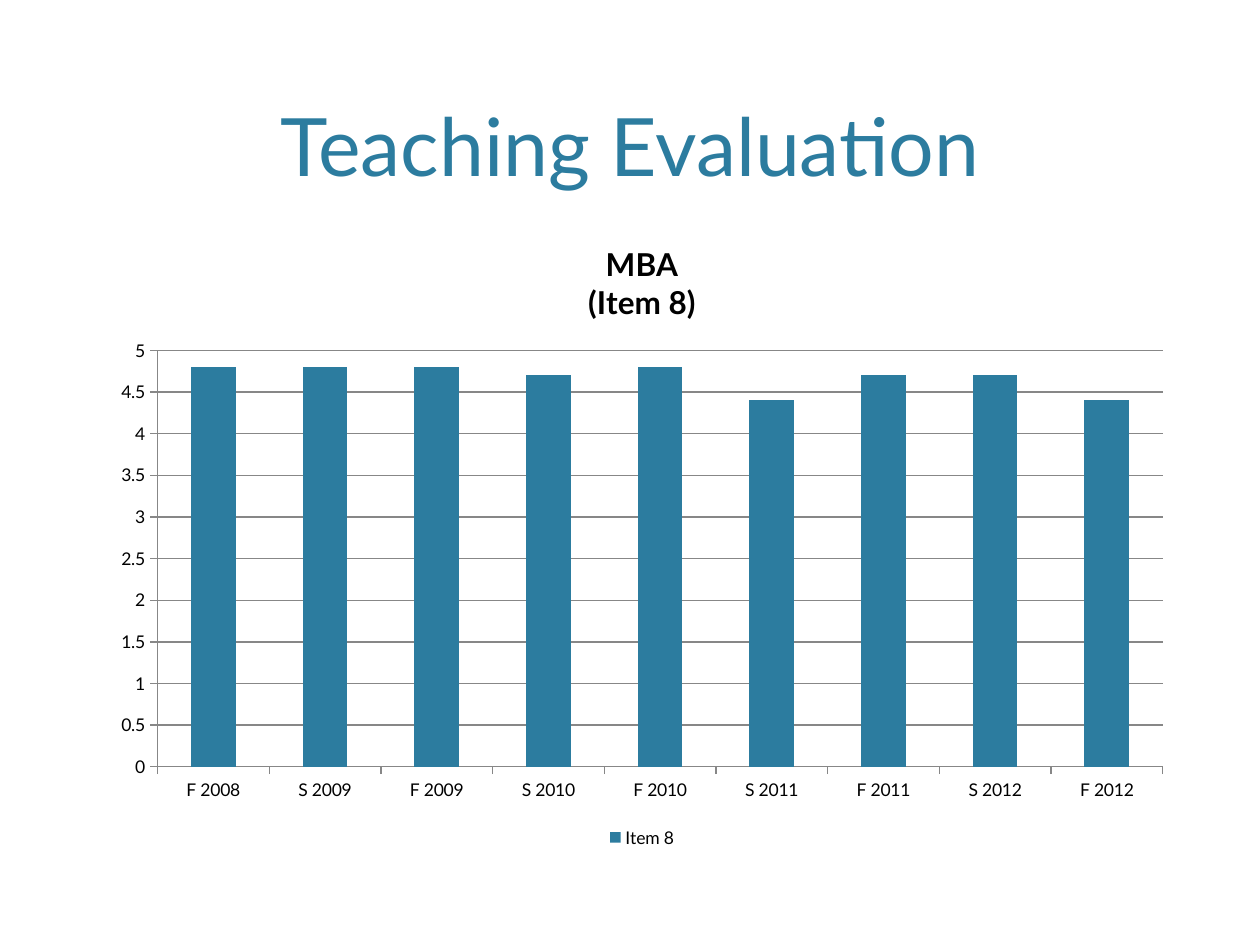
"""Build the Teaching Evaluation slide with its column chart of MBA ratings."""
from pptx import Presentation
from pptx import util as u
from pptx.chart.data import CategoryChartData
from pptx.dml.color import RGBColor
from pptx.enum import chart as ch, text

TEAL = RGBColor(0x2C, 0x7C, 0x9F)
BLACK = RGBColor(0, 0, 0)
GRAY = RGBColor(0x87, 0x87, 0x87)
FONT = "Lato"


def add_text(p, words, size, color=BLACK, bold=False):
    p.alignment = text.PP_ALIGN.CENTER
    r = p.add_run()
    r.text = words
    r.font.name = FONT
    r.font.size = u.Pt(size)
    r.font.bold = bold
    r.font.color.rgb = color


prs = Presentation()
prs.slide_width, prs.slide_height = u.Inches(10), u.Inches(7.5)
s = prs.slides.add_slide(prs.slide_layouts[5])

title = s.shapes.title
title.left, title.top = u.Inches(0.6), u.Inches(0.12)
title.width, title.height = u.Inches(8.8), u.Inches(1.46)
tf = title.text_frame
tf.vertical_anchor = text.MSO_ANCHOR.BOTTOM
tf.auto_size = text.MSO_AUTO_SIZE.NONE
add_text(tf.paragraphs[0], "Teaching Evaluation", 46, TEAL)

data = CategoryChartData()
data.categories = ["F 2008", "S 2009", "F 2009", "S 2010", "F 2010",
                   "S 2011", "F 2011", "S 2012", "F 2012"]
data.add_series("Item 8", [4.8, 4.8, 4.8, 4.7, 4.8, 4.4, 4.7, 4.7, 4.4])
chart = s.shapes.add_chart(
    ch.XL_CHART_TYPE.COLUMN_CLUSTERED, u.Inches(0.79), u.Inches(1.74),
    u.Inches(8.61), u.Inches(5.03), data).chart
chart.font.name = FONT
chart.font.size = u.Pt(10)
chart.font.color.rgb = BLACK

chart.has_title = True
tf = chart.chart_title.text_frame
add_text(tf.paragraphs[0], "MBA", 18, bold=True)
add_text(tf.add_paragraph(), "(Item 8)", 18, bold=True)
chart.chart_title.include_in_layout = False

chart.has_legend = True
chart.legend.position = ch.XL_LEGEND_POSITION.BOTTOM
chart.legend.include_in_layout = False

plot = chart.plots[0]
plot.gap_width = 150
plot.vary_by_categories = False
fill = plot.series[0].format.fill
fill.solid()
fill.fore_color.rgb = TEAL

values = chart.value_axis
values.minimum_scale, values.maximum_scale, values.major_unit = 0, 5, 0.5
values.has_major_gridlines = True
for axis in (values, chart.category_axis):
    axis.major_tick_mark = ch.XL_TICK_MARK.OUTSIDE
    axis.minor_tick_mark = ch.XL_TICK_MARK.NONE
for part in (values, chart.category_axis, values.major_gridlines):
    part.format.line.color.rgb = GRAY
    part.format.line.width = u.Pt(0.75)

prs.save("out.pptx")
